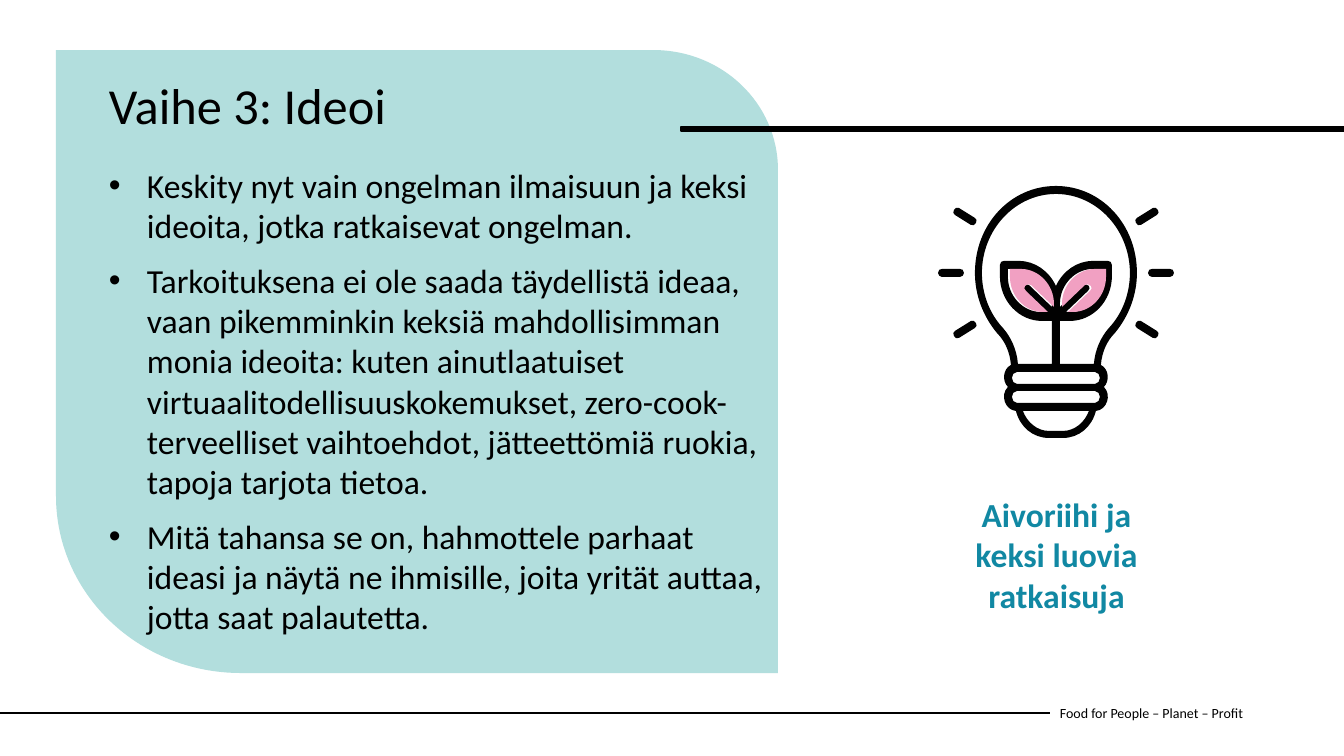
from dataclasses import dataclass

from lxml import etree
from pptx import Presentation
from pptx.dml.color import RGBColor
from pptx.enum.shapes import MSO_CONNECTOR, MSO_SHAPE
from pptx.enum.text import MSO_ANCHOR, PP_ALIGN
from pptx.oxml.ns import qn
from pptx.util import Pt

RECTANGLE, STRAIGHT = MSO_SHAPE.RECTANGLE, MSO_CONNECTOR.STRAIGHT
TOP, MIDDLE = MSO_ANCHOR.TOP, MSO_ANCHOR.MIDDLE
LEFT, CENTER = PP_ALIGN.LEFT, PP_ALIGN.CENTER

EMU_PER_PX = 12192000 / 1344
BULB_AXIS = 1056


@dataclass(frozen=True)
class Theme:
    font: str = "Calibri"
    ink: str = "000000"
    icon: str = "010101"
    panel: str = "B2DEDD"
    leaf: str = "F1A0C2"
    caption: str = "1188A3"
    title_size: int = 36
    body_size: int = 24
    footer_size: int = 10


THEME = Theme()

IDEAS = [
    "Keskity nyt vain ongelman ilmaisuun ja keksi ideoita, jotka ratkaisevat ongelman.",
    "Tarkoituksena ei ole saada täydellistä ideaa, vaan pikemminkin keksiä mahdollisimman "
    "monia ideoita: kuten ainutlaatuiset virtuaalitodellisuuskokemukset, "
    "zero-cook-terveelliset vaihtoehdot, jätteettömiä ruokia, tapoja tarjota tietoa.",
    "Mitä tahansa se on, hahmottele parhaat ideasi ja näytä ne ihmisille, "
    "joita yrität auttaa, jotta saat palautetta.",
]
CAPTION = ["Aivoriihi ja", "keksi luovia", "ratkaisuja"]

# Outlines: a pair is a corner, six numbers are a Bezier curve to the last pair.
PANEL = [(778, 673), (241, 673), (139, 673, 56, 594, 56, 496), (56, 50),
         (653, 50), (723, 50, 778, 104, 778, 170)]

# Bulb parts: distance from the bulb axis, then height on the slide.
HALF_SILHOUETTE = [
    (0, 186), (45, 186, 81, 224, 81, 273), (81, 295, 73, 316, 59, 333),
    (51, 341, 46, 352, 45, 365), (53, 369, 54, 381, 48, 387),
    (56, 395, 51, 410, 40, 411), (36, 427, 23, 438, 7, 438)]
HALF_GLASS = [
    (0, 194), (41, 194, 74, 230, 74, 273), (74, 293, 67, 313, 53, 328),
    (45, 337, 39, 350, 38, 364), (4, 364), (4, 321), (14, 321),
    (37, 321, 56, 301, 56, 276), (56, 265), (56, 262, 54, 261, 52, 261),
    (37, 261), (21, 261, 7, 271, 0, 286)]
HALF_BASE = [(0, 431), (7, 431), (19, 431, 29, 422, 33, 411), (0, 411)]
LEAF = [
    (4, 307), (27, 285), (29, 284, 31, 284, 33, 286), (34, 287, 34, 290, 32, 291),
    (10, 312), (15, 312), (33, 312, 48, 296, 48, 277), (48, 269), (37, 269),
    (19, 269, 4, 285, 4, 304)]
LEVEL_RAY = [
    (92, 273), (92, 270, 94, 269, 96, 269), (114, 269), (116, 269, 118, 270, 118, 273),
    (118, 275, 116, 277, 114, 277), (96, 277), (94, 277, 92, 275, 92, 273)]
LOWER_RAY = [
    (85, 321), (101, 331), (103, 332, 103, 334, 102, 336), (101, 338, 99, 339, 97, 338),
    (81, 328), (79, 327, 79, 325, 80, 323), (81, 321, 83, 320, 85, 321)]
RAY_LEVEL = 273
RING_CENTERS = (378, 397)
LEAF_TINT_SHIFT = 2


def emu(px):
    return round(px * EMU_PER_PX)


def rgb(color):
    return RGBColor.from_string(color)


def pairs(step):
    return list(zip(step[::2], step[1::2]))


def on_axis(outline, side, shift=0):
    return [sum(((BULB_AXIS + side * dx + shift, y) for dx, y in pairs(step)), ())
            for step in outline]


def flipped(outline):
    """Mirror a ray across the level of the middle rays."""
    return [sum(((dx, 2 * RAY_LEVEL - y) for dx, y in pairs(step)), ())
            for step in outline]


def backwards(outline):
    """Trace an outline from its end to its start."""
    steps = [outline[-1][-2:]]
    for before, step in zip(outline[-2::-1], outline[:0:-1]):
        controls = step[2:4] + step[:2] if len(step) == 6 else ()
        steps.append(controls + before[-2:])
    return steps


def symmetric(half):
    """Close a half outline with its mirror image across the bulb axis."""
    left, right = on_axis(half, -1), on_axis(backwards(half), 1)
    return left + (right[1:] if right[0] == left[-1][-2:] else right)


def half_ring(center):
    top, bottom = center - 6, center + 6
    return [(0, bottom), (39, bottom), (42, bottom, 44, center + 3, 44, center),
            (44, center - 3, 42, top, 39, top), (0, top)]


def paint(shape, color, line_width=None):
    shape.shadow.inherit = False
    shape.fill.solid()
    shape.fill.fore_color.rgb = rgb(color)
    if line_width is None:
        shape.line.fill.background()
    else:
        shape.line.color.rgb = rgb(color)
        shape.line.width = Pt(line_width)


def add_outline(shapes, contours, color):
    """Draw one filled freeform; contours after the first cut holes in it."""
    corners = [[tuple(map(emu, step[-2:])) for step in contour] for contour in contours]
    builder = shapes.build_freeform(*corners[0][0], scale=1.0)
    for index, contour in enumerate(corners):
        if index:
            builder.move_to(*contour[0])
        builder.add_line_segments(contour[1:], close=False)
        builder.add_line_segments([], close=True)
    outline = builder.convert_to_shape()
    paint(outline, color)
    bend(outline, [step for contour in contours for step in contour])


def bend(outline, steps):
    """Turn the straight segments of curved steps into Bezier curves."""
    segments = outline.element.findall(".//" + qn("a:pt"))
    left, top = (min(emu(step[axis]) for step in steps) for axis in (-2, -1))
    for point, step in zip(segments, steps):
        if len(step) == 6:
            segment = point.getparent()
            curve = etree.Element(qn("a:cubicBezTo"))
            for x, y in pairs(step):
                knot = etree.SubElement(curve, qn("a:pt"))
                knot.set("x", str(emu(x) - left))
                knot.set("y", str(emu(y) - top))
            segment.getparent().replace(segment, curve)


def add_bar(shapes, box, color, line_width):
    paint(shapes.add_shape(RECTANGLE, *map(emu, box)), color, line_width)


def add_rule(shapes, start, end, width):
    rule = shapes.add_connector(STRAIGHT, *map(emu, start + end))
    rule.line.color.rgb = rgb(THEME.ink)
    rule.line.width = Pt(width)
    etree.SubElement(rule.element.spPr, qn("a:effectLst"))


def add_bullet(paragraph):
    properties = paragraph._p.get_or_add_pPr()
    properties.set("marL", str(emu(38)))
    properties.set("indent", str(-emu(38)))
    etree.SubElement(properties, qn("a:buFont")).set("typeface", "Arial")
    etree.SubElement(properties, qn("a:buChar")).set("char", "•")


def add_text(shapes, box, lines, size, color=THEME.ink, bold=False, align=LEFT,
             anchor=TOP, space_before=0, line_spacing=1.0, bulleted=False):
    frame = shapes.add_textbox(*map(emu, box)).text_frame
    frame.word_wrap = True
    frame.vertical_anchor = anchor
    for index, line in enumerate(lines):
        paragraph = frame.add_paragraph() if index else frame.paragraphs[0]
        paragraph.alignment = align
        paragraph.space_before = Pt(space_before)
        paragraph.line_spacing = line_spacing
        if bulleted:
            add_bullet(paragraph)
        run = paragraph.add_run()
        run.text = line
        run.font.name = THEME.font
        run.font.size = Pt(size)
        run.font.bold = bold
        run.font.color.rgb = rgb(color)


def add_bulb(shapes):
    bulb = shapes.add_group_shape().shapes
    halves = [HALF_SILHOUETTE, HALF_GLASS, HALF_BASE, *map(half_ring, RING_CENTERS)]
    leaves = [on_axis(LEAF, side) for side in (-1, 1)]
    add_outline(bulb, [symmetric(half) for half in halves] + leaves, THEME.icon)
    for side in (-1, 1):
        for ray in (LEVEL_RAY, LOWER_RAY, flipped(LOWER_RAY)):
            add_outline(bulb, [on_axis(ray, side)], THEME.icon)
    for side in (1, -1):
        add_outline(bulb, [on_axis(LEAF, side, LEAF_TINT_SHIFT)], THEME.leaf)


def main():
    deck = Presentation()
    deck.slide_width, deck.slide_height = emu(1344), emu(756)
    shapes = deck.slides.add_slide(deck.slide_layouts[6]).shapes
    add_text(shapes, (1050, 693, 275, 40), ["Food for People – Planet – Profit"],
             THEME.footer_size, anchor=MIDDLE)
    add_rule(shapes, (0, 713), (1050, 713), 1.5)
    add_outline(shapes, [PANEL], THEME.panel)
    add_bar(shapes, (681, 127, 663, 4), THEME.ink, 1.93)
    add_text(shapes, (99, 76, 550, 110), ["Vaihe 3: Ideoi"], THEME.title_size,
             space_before=10, line_spacing=0.9)
    add_text(shapes, (99, 160, 678, 459), IDEAS, THEME.body_size,
             space_before=10, bulleted=True)
    add_bulb(shapes)
    add_text(shapes, (836, 489, 441, 132), CAPTION, THEME.body_size,
             color=THEME.caption, bold=True, align=CENTER)
    deck.save("out.pptx")


if __name__ == "__main__":
    main()
